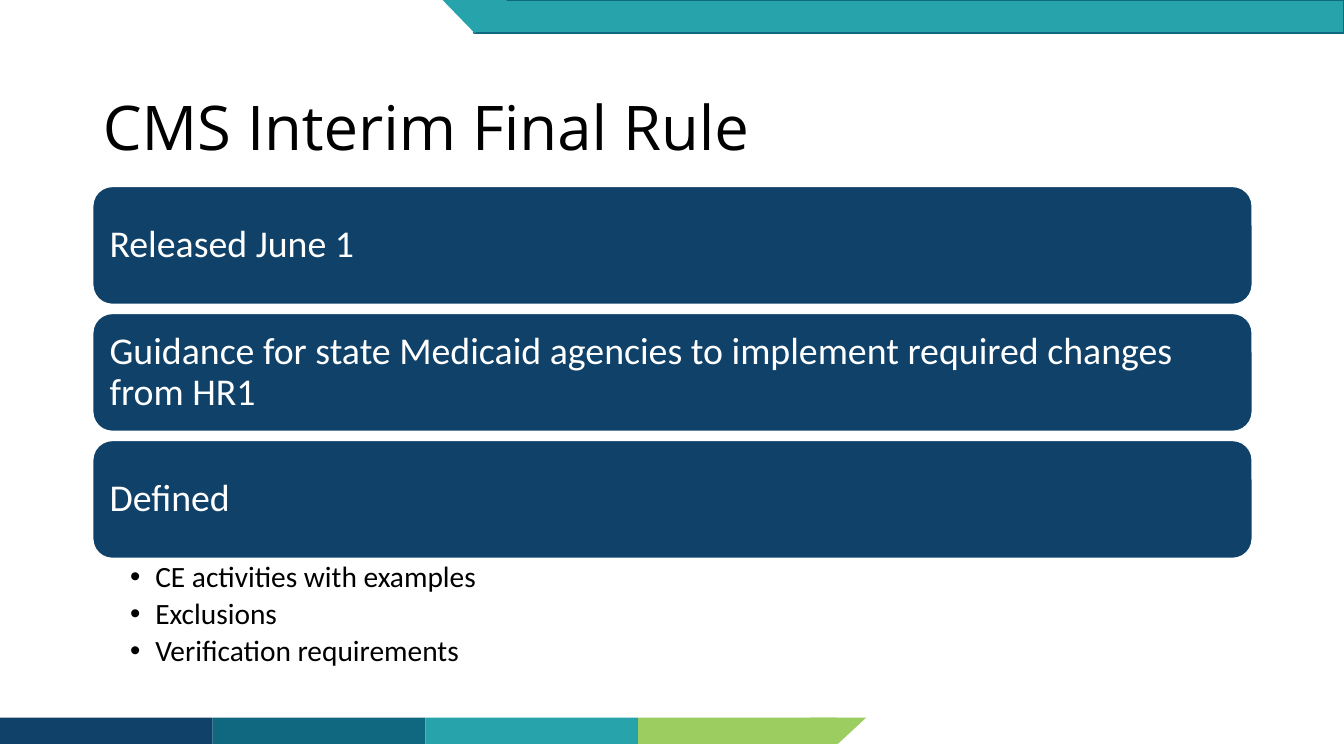
from lxml import etree
from pptx import Presentation, util as u
from pptx.dml.color import RGBColor
from pptx.enum import shapes, text
from pptx.oxml.ns import qn

HUES = {"navy": "104169", "teal": "0F687F", "aqua": "26A3AB",
        "lime": "9CCD60", "white": "FFFFFF", "black": "000000"}
KIND = shapes.MSO_SHAPE


def hue(name):
    return RGBColor.from_string(HUES[name])


def block(kind, box, fill, line=None):
    """Add a filled preset shape, with a 1 pt line if one is named."""
    shape = slide.shapes.add_shape(kind, *map(u.Inches, box))
    shape.shadow.inherit = False
    shape.fill.solid()
    shape.fill.fore_color.rgb = hue(fill)
    if line:
        shape.line.color.rgb = hue(line)
        shape.line.width = u.Pt(1)
    else:
        shape.line.fill.background()
    return shape


deck = Presentation()
deck.slide_width, deck.slide_height = u.Inches(13.33), u.Inches(7.5)
slide = deck.slides.add_slide(deck.slide_layouts[1])

# Footer strip and header band, each with a slanted end
step = 2.11
for i, fill in enumerate(["navy", "teal", "aqua", "lime"]):
    width = 1.97 if fill == "lime" else step
    block(KIND.RECTANGLE, (i * step, 7.12, width, 0.26), fill)
block(KIND.ISOSCELES_TRIANGLE, (8.03, 7.12, 0.56, 0.26), "lime").rotation = 180
block(KIND.RECTANGLE, (4.7, 0, 8.63, 0.33), "aqua", "teal")
block(KIND.ISOSCELES_TRIANGLE, (4.39, 0, 0.64, 0.33), "aqua").rotation = 180

# Title
left, wide = 0.92, 11.5
title = slide.shapes.title
title.left, title.top, title.width, title.height = map(
    u.Inches, (left, 0.57, wide, 1.45))
frame = title.text_frame
frame.text = "CMS Interim Final Rule"
frame.auto_size = text.MSO_AUTO_SIZE.NONE
frame.vertical_anchor = text.MSO_ANCHOR.MIDDLE
para = frame.paragraphs[0]
para.alignment = text.PP_ALIGN.LEFT
para.line_spacing = 0.9
para.font.name, para.font.size = "Open Sans", u.Pt(44)
para.font.color.rgb = hue("black")

# Rounded bars
bars = ["Released June 1",
        "Guidance for state Medicaid agencies to implement required changes from HR1",
        "Defined"]
for i, words in enumerate(bars):
    bar = block(KIND.ROUNDED_RECTANGLE, (left, 1.85 + i * 1.26, wide, 1.17),
                "navy", "white")
    frame = bar.text_frame
    frame.text = words
    frame.word_wrap = True
    frame.vertical_anchor = text.MSO_ANCHOR.MIDDLE
    frame.margin_left = frame.margin_right = u.Inches(0.11)
    frame.margin_top = frame.margin_bottom = u.Inches(0.11)
    para = frame.paragraphs[0]
    para.alignment = text.PP_ALIGN.LEFT
    para.line_spacing = 0.9
    para.font.name, para.font.size = "Calibri", u.Pt(27)
    para.font.color.rgb = hue("white")

# Bullets under the last bar
body = slide.placeholders[1]
body.left, body.top, body.width, body.height = map(
    u.Inches, (left, 5.54, wide, 1.19))
frame = body.text_frame
frame.text = "CE activities with examples\nExclusions\nVerification requirements"
frame.auto_size = text.MSO_AUTO_SIZE.NONE
frame.vertical_anchor = text.MSO_ANCHOR.TOP
frame.margin_left, frame.margin_right = u.Inches(0.37), u.Inches(0.21)
frame.margin_top = frame.margin_bottom = u.Inches(0.04)
for para in frame.paragraphs:
    para.level = 1
    para.line_spacing = 0.9
    para.space_before, para.space_after = u.Pt(0), u.Pt(3.6)
    props = para._p.get_or_add_pPr()
    props.set("marL", str(u.Inches(0.25)))
    props.set("indent", str(u.Inches(-0.25)))
    etree.SubElement(props, qn("a:buChar"), char="•")
    para.font.name, para.font.size = "Calibri", u.Pt(21)
    para.font.color.rgb = hue("black")

deck.save("out.pptx")
